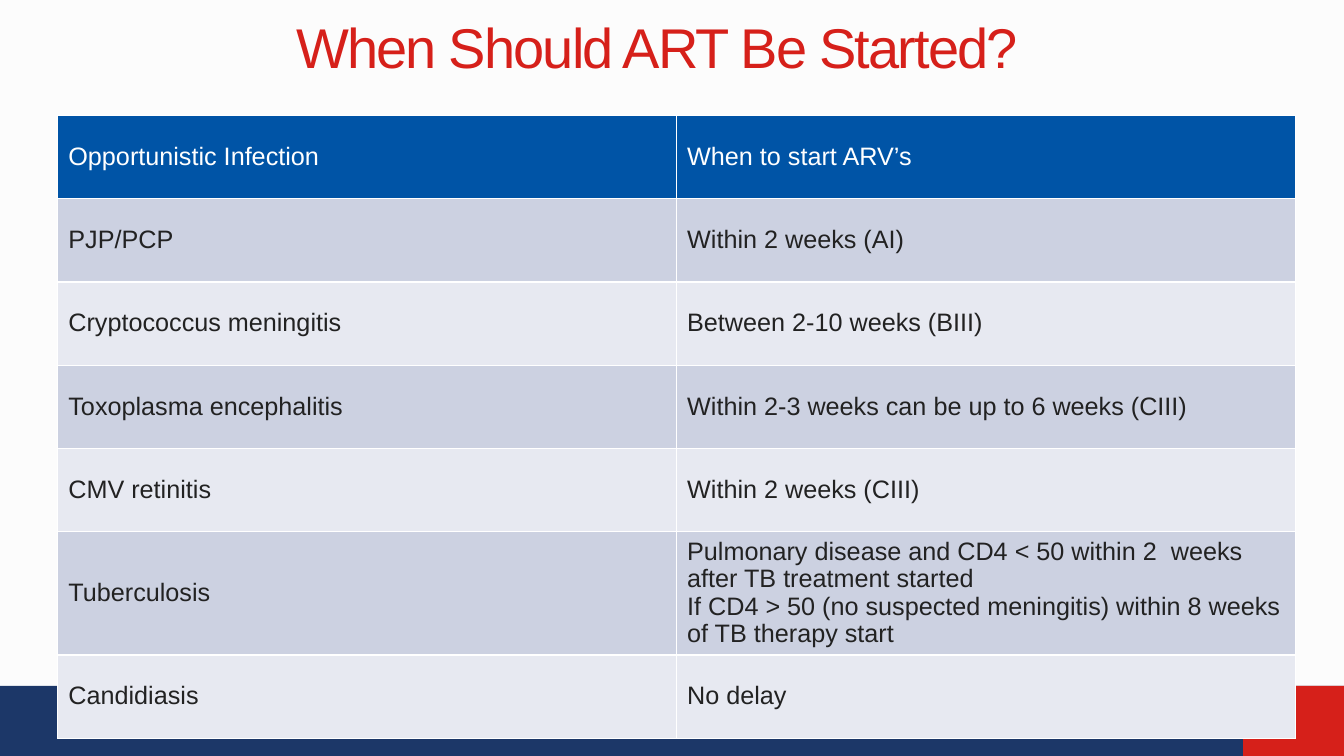
import pptx
import pptx.util
import pptx.dml.color
import pptx.enum.shapes
import pptx.enum.text

Pt = pptx.util.Pt
RGBColor = pptx.dml.color.RGBColor
ALIGN = pptx.enum.text.PP_ALIGN
MIDDLE = pptx.enum.text.MSO_ANCHOR.MIDDLE

BACKGROUND = RGBColor(0xFC, 0xFC, 0xFC)
NAVY = RGBColor(0x1C, 0x37, 0x68)
RED = RGBColor(0xD6, 0x20, 0x1A)
BLUE = RGBColor(0x00, 0x54, 0xA6)
BAND_DARK = RGBColor(0xCC, 0xD1, 0xE1)
BAND_LIGHT = RGBColor(0xE7, 0xE9, 0xF1)
WHITE = RGBColor(0xFF, 0xFF, 0xFF)
INK = RGBColor(0x22, 0x22, 0x22)

ROWS = [
    ("Opportunistic Infection", "When to start ARV’s"),
    ("PJP/PCP", "Within 2 weeks (AI)"),
    ("Cryptococcus meningitis", "Between 2-10 weeks (BIII)"),
    ("Toxoplasma encephalitis", "Within 2-3 weeks can be up to 6 weeks (CIII)"),
    ("CMV retinitis", "Within 2 weeks (CIII)"),
    ("Tuberculosis",
     "Pulmonary disease and CD4 < 50 within 2  weeks after TB treatment started\n"
     "If CD4 > 50 (no suspected meningitis) within 8 weeks of TB therapy start"),
    ("Candidiasis", "No delay"),
]


def write_text(text_frame, text, size, color, align=ALIGN.LEFT, line_spacing=0.97, tracking=0):
    text_frame.text = text
    for paragraph in text_frame.paragraphs:
        paragraph.alignment = align
        paragraph.line_spacing = line_spacing
        for run in paragraph.runs:
            run.font.name = "Arial"
            run.font.size = Pt(size)
            run.font.bold = False
            run.font.color.rgb = color
            if tracking:
                run.font._element.set("spc", str(round(tracking * 100)))


presentation = pptx.Presentation()
presentation.slide_width = Pt(960)
presentation.slide_height = Pt(540)
slide = presentation.slides.add_slide(presentation.slide_layouts[5])
slide.background.fill.solid()
slide.background.fill.fore_color.rgb = BACKGROUND

for left, width, color in [(0, 960, NAVY), (888, 72, RED)]:
    footer = slide.shapes.add_shape(
        pptx.enum.shapes.MSO_SHAPE.RECTANGLE, Pt(left), Pt(490), Pt(width), Pt(50))
    footer.shadow.inherit = False
    footer.fill.solid()
    footer.fill.fore_color.rgb = color
    footer.line.fill.background()

title = slide.shapes.title
title.left, title.top, title.width, title.height = Pt(46.8), Pt(8.6), Pt(845.3), Pt(55.4)
title.text_frame.vertical_anchor = MIDDLE
title.text_frame.auto_size = pptx.enum.text.MSO_AUTO_SIZE.NONE
write_text(title.text_frame, "When Should ART Be Started?", size=40, color=RED,
           align=ALIGN.CENTER, line_spacing=0.9, tracking=-1.3)

table = slide.shapes.add_table(
    len(ROWS), 2, Pt(41.2), Pt(82.4), Pt(884), Pt(59.5 * len(ROWS))).table
for row_index, texts in enumerate(ROWS):
    table.rows[row_index].height = Pt(88 if row_index == 5 else 59.5)
    if row_index == 0:
        fill_color, text_color = BLUE, WHITE
    else:
        fill_color, text_color = (BAND_DARK if row_index % 2 else BAND_LIGHT), INK
    for column_index, text in enumerate(texts):
        cell = table.cell(row_index, column_index)
        cell.fill.solid()
        cell.fill.fore_color.rgb = fill_color
        cell.vertical_anchor = MIDDLE
        cell.margin_left = cell.margin_right = Pt(7.7)
        cell.margin_top = cell.margin_bottom = Pt(3.8)
        write_text(cell.text_frame, text, size=18, color=text_color)

presentation.save("out.pptx")
